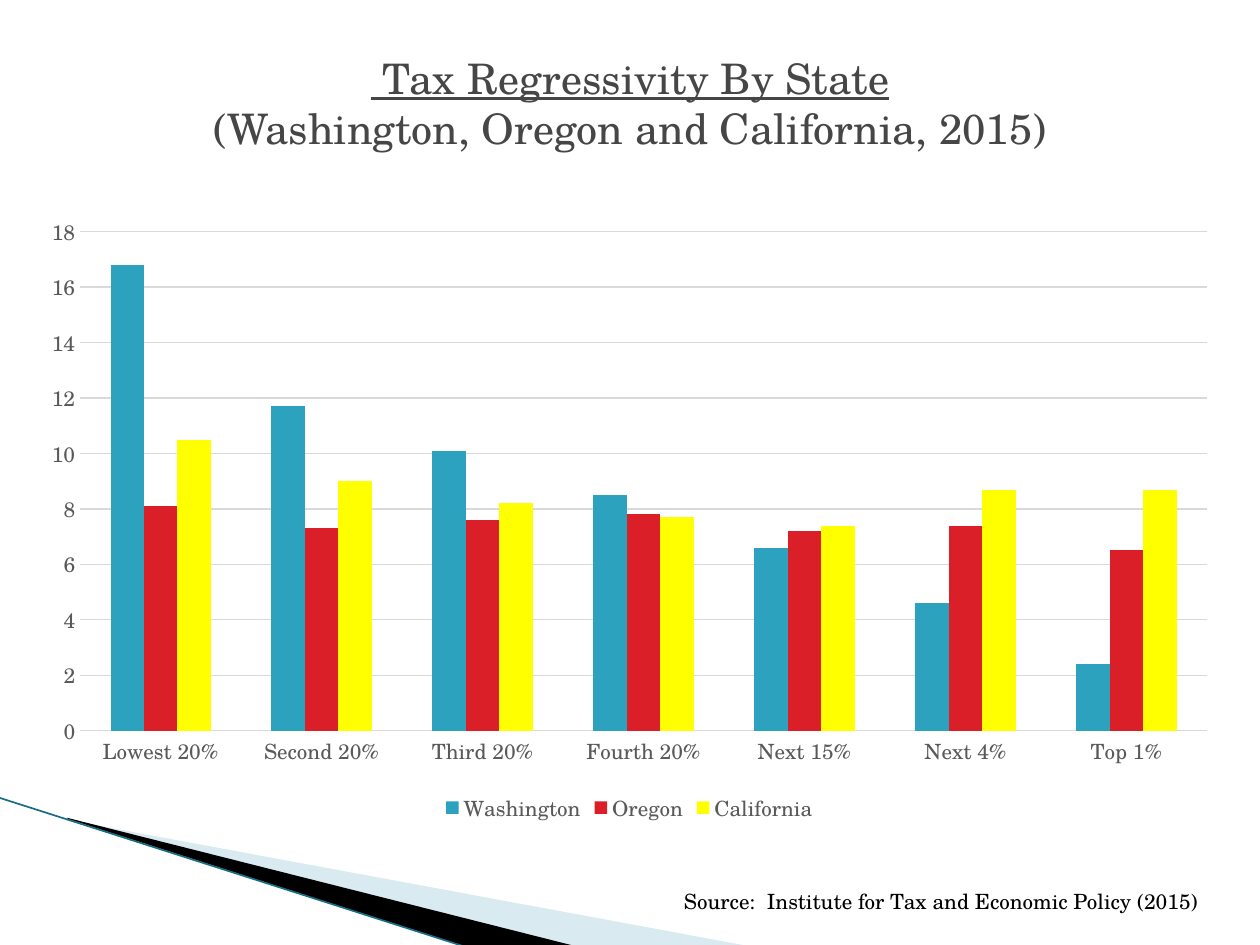
from lxml import etree
from pptx import Presentation
from pptx.chart.data import CategoryChartData
from pptx.dml.color import RGBColor
from pptx.enum.chart import XL_CHART_TYPE, XL_LEGEND_POSITION, XL_TICK_MARK
from pptx.enum.shapes import MSO_CONNECTOR
from pptx.enum.text import MSO_ANCHOR, MSO_AUTO_SIZE, PP_ALIGN
from pptx.oxml.ns import qn
from pptx.util import Inches, Pt

COLUMNS = XL_CHART_TYPE.COLUMN_CLUSTERED
BOTTOM = XL_LEGEND_POSITION.BOTTOM
NO_TICK = XL_TICK_MARK.NONE
STRAIGHT = MSO_CONNECTOR.STRAIGHT
MIDDLE = MSO_ANCHOR.MIDDLE
FIT_SHAPE = MSO_AUTO_SIZE.SHAPE_TO_FIT_TEXT
NO_FIT = MSO_AUTO_SIZE.NONE
CENTER = PP_ALIGN.CENTER

BLACK = RGBColor(0x00, 0x00, 0x00)
TITLE_GRAY = RGBColor(0x46, 0x46, 0x46)
LABEL_GRAY = RGBColor(0x59, 0x59, 0x59)
GRID_GRAY = RGBColor(0xD9, 0xD9, 0xD9)
PALE_BLUE = RGBColor(0xA0, 0xCB, 0xDC)
DARK_TEAL = RGBColor(0x16, 0x6E, 0x82)
TEAL = RGBColor(0x2D, 0xA2, 0xBF)
RED = RGBColor(0xDA, 0x1F, 0x28)
YELLOW = RGBColor(0xFF, 0xFF, 0x00)

BRACKETS = ["Lowest 20%", "Second 20%", "Third 20%", "Fourth 20%",
            "Next 15%", "Next 4%", "Top 1%"]
STATES = [
    ("Washington", TEAL, [16.8, 11.7, 10.1, 8.5, 6.6, 4.6, 2.4]),
    ("Oregon", RED, [8.1, 7.3, 7.6, 7.8, 7.2, 7.4, 6.5]),
    ("California", YELLOW, [10.5, 9, 8.2, 7.7, 7.4, 8.7, 8.7]),
]


class SlideBuilder:
    face = "TeX Gyre Schola"

    def __init__(self, slide):
        self.slide = slide
        self.shapes = slide.shapes

    def style(self, font, size, color):
        font.name = self.face
        font.size = Pt(size)
        font.color.rgb = color

    def run(self, paragraph, text, size, color):
        run = paragraph.add_run()
        run.text = text
        self.style(run.font, size, color)
        return run

    def title(self, heading, subheading, left, top, width, height):
        title = self.shapes.title
        title.left, title.top = Inches(left), Inches(top)
        title.width, title.height = Inches(width), Inches(height)
        frame = title.text_frame
        frame.vertical_anchor = MIDDLE
        frame.auto_size = NO_FIT
        paragraph = frame.paragraphs[0]
        paragraph.alignment = CENTER
        self.run(paragraph, heading, 24, TITLE_GRAY).font.underline = True
        paragraph.add_line_break()
        self.run(paragraph, subheading, 24, TITLE_GRAY).font.underline = False

    def wedge(self, points, color, opacity=100):
        corners = [(Inches(x), Inches(y)) for x, y in points]
        outline = self.shapes.build_freeform(*corners[0])
        outline.add_line_segments(corners[1:])
        wedge = outline.convert_to_shape()
        wedge.shadow.inherit = False
        wedge.line.fill.background()
        wedge.fill.solid()
        wedge.fill.fore_color.rgb = color
        if opacity < 100:
            fill_color = wedge.fill._xPr.find(qn("a:solidFill"))[0]
            alpha = etree.SubElement(fill_color, qn("a:alpha"))
            alpha.set("val", str(opacity * 1000))

    def line(self, start, end, color, weight):
        line = self.shapes.add_connector(
            STRAIGHT, *(Inches(value) for value in start + end))
        line.line.color.rgb = color
        line.line.width = Pt(weight)
        etree.SubElement(line._element.spPr, qn("a:effectLst"))

    def chart(self, categories, series, left, top, width, height):
        data = CategoryChartData()
        data.categories = categories
        for name, _, values in series:
            data.add_series(name, values)
        chart = self.shapes.add_chart(
            COLUMNS, Inches(left), Inches(top), Inches(width), Inches(height), data).chart
        self.style(chart.font, 10, BLACK)
        chart.has_title = False
        chart.has_legend = True
        chart.legend.position = BOTTOM
        chart.legend.include_in_layout = False
        self.style(chart.legend.font, 12, LABEL_GRAY)

        for axis in (chart.category_axis, chart.value_axis):
            axis.major_tick_mark = NO_TICK
            axis.minor_tick_mark = NO_TICK
            self.style(axis.tick_labels.font, 12, LABEL_GRAY)
        amounts = chart.value_axis
        amounts.minimum_scale, amounts.maximum_scale = 0, 18
        amounts.major_unit = 2
        amounts.format.line.fill.background()
        for rule in (chart.category_axis.format.line, amounts.major_gridlines.format.line):
            rule.color.rgb = GRID_GRAY
            rule.width = Pt(0.75)

        plot = chart.plots[0]
        plot.gap_width = 182
        plot.overlap = 0
        plot.vary_by_categories = False
        for columns, (_, color, _) in zip(plot.series, series):
            columns.format.fill.solid()
            columns.format.fill.fore_color.rgb = color

    def text(self, wording, left, top, width, height):
        box = self.shapes.add_textbox(
            Inches(left), Inches(top), Inches(width), Inches(height))
        frame = box.text_frame
        frame.word_wrap = True
        frame.auto_size = FIT_SHAPE
        self.run(frame.paragraphs[0], wording, 12, BLACK)


def main():
    deck = Presentation()
    deck.slide_width, deck.slide_height = Inches(10), Inches(7.5)
    builder = SlideBuilder(deck.slides.add_slide(deck.slide_layouts[5]))
    builder.wedge([(0.55, 6.51), (5.95, 7.51), (4.56, 7.51), (0.55, 6.5)], PALE_BLUE, 40)
    builder.wedge([(0.53, 6.49), (4.57, 7.51), (3.72, 7.52), (0.54, 6.5)], BLACK)
    builder.line((-0.01, 6.33), (3.71, 7.52), DARK_TEAL, 0.95)
    builder.chart(BRACKETS, STATES, 0.22, 1.62, 9.55, 4.95)
    builder.title(" Tax Regressivity By State",
                  "(Washington, Oregon and California, 2015)", 0.5, 0.3, 9, 1.03)
    builder.text("Source:  Institute for Tax and Economic Policy (2015)", 5.33, 7, 6.17, 0.3)
    deck.save("out.pptx")


if __name__ == "__main__":
    main()
